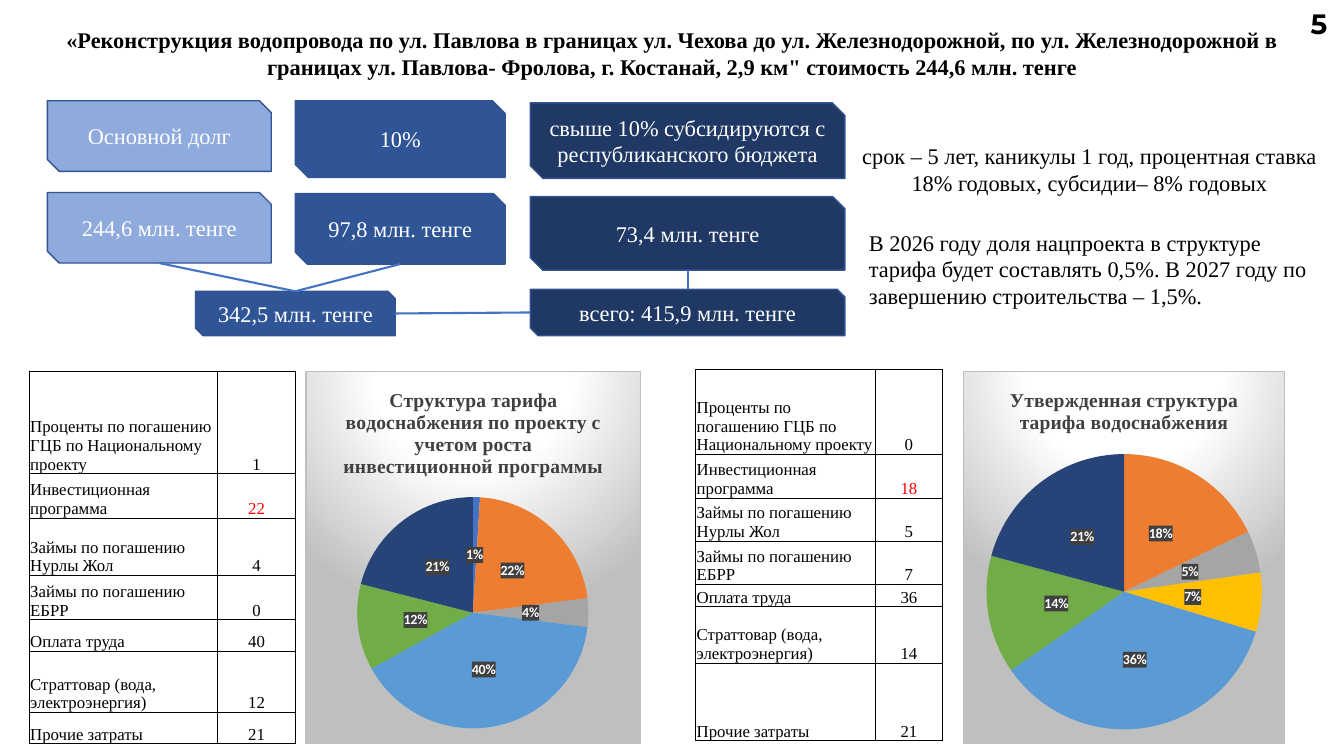
from lxml import etree
from pptx import Presentation
from pptx.chart.data import CategoryChartData
from pptx.dml.color import RGBColor
from pptx.enum import chart as ch, shapes, text
from pptx.oxml import parse_xml
from pptx.oxml.ns import qn
from pptx.util import Inches, Pt


class Theme:
    serif, sans, mark = "Times New Roman", "Calibri", "Montserrat"
    body, cell, head, label, page = 16, 12, 14, 10, 20
    black, white, red, grey = "000000", "FFFFFF", "FF0000", "404040"
    pale, mid, dark = "8FAADC", "2F5597", "203864"
    edge, link, rim = "325491", "4472C4", "BFBFBF"
    pie = ["4472C4", "ED7D31", "A5A5A5", "FFC000", "5B9BD5", "70AD47", "264478"]


TITLE = ("«Реконструкция водопровода по ул. Павлова в границах ул. Чехова до ул. "
         "Железнодорожной, по ул. Железнодорожной в границах ул. Павлова- Фролова, "
         "г. Костанай, 2,9 км\" стоимость 244,6 млн. тенге")
TERMS = ("срок – 5 лет, каникулы 1 год, процентная ставка 18% годовых, "
         "субсидии– 8% годовых")
SHARE = ("В 2026 году доля нацпроекта в структуре тарифа будет составлять 0,5%. "
         "В 2027 году по завершению строительства – 1,5%.")

# name: (words, fill, (left, top, width, height))
BOXES = {
    "debt": ("Основной долг", Theme.pale, (0.47, 1, 2.22, 0.7)),
    "rate": ("10%", Theme.mid, (2.93, 1, 2.08, 0.76)),
    "grant": ("свыше 10% субсидируются с республиканского бюджета", Theme.dark,
              (5.26, 1.02, 3.12, 0.75)),
    "debt sum": ("244,6 млн. тенге", Theme.pale, (0.47, 1.91, 2.22, 0.7)),
    "rate sum": ("97,8 млн. тенге", Theme.mid, (2.93, 1.92, 2.08, 0.7)),
    "grant sum": ("73,4 млн. тенге", Theme.dark, (5.26, 1.95, 3.12, 0.73)),
    "own": ("342,5 млн. тенге", Theme.mid, (1.94, 2.89, 1.98, 0.44)),
    "total": ("всего: 415,9 млн. тенге", Theme.dark, (5.26, 2.87, 3.12, 0.46)),
}
LINKS = [("debt sum", "bottom", "own", "top"), ("rate sum", "bottom", "own", "top"),
         ("own", "right", "total", "left"), ("grant sum", "bottom", "total", "top")]

COSTS = ["Проценты по погашению ГЦБ по Национальному проекту",
         "Инвестиционная программа", "Займы по погашению Нурлы Жол",
         "Займы по погашению ЕБРР", "Оплата труда",
         "Страттовар (вода, электроэнергия)", "Прочие затраты"]
INVEST = 1  # row whose value is red

# pie: left, top, diameter on the slide
TARIFFS = [
    dict(name="Структура тарифа водоснабжения по проекту с учетом роста "
              "инвестиционной программы",
         vals=[1, 22, 4, 0, 40, 12, 21],
         chart=(3.03, 3.68, 3.33, 3.7), pie=(3.54, 4.93, 2.3),
         grid=(0.29, 3.68), cols=[1.87, 0.77],
         rows=[1.02, 0.44, 0.57, 0.44, 0.31, 0.61, 0.31]),
    dict(name="Утвержденная структура тарифа водоснабжения",
         vals=[0, 18, 5, 7, 36, 14, 21],
         chart=(9.55, 3.68, 3.2, 3.7), pie=(9.78, 4.5, 2.74),
         grid=(6.9, 3.66), cols=[1.78, 0.67],
         rows=[0.85, 0.43, 0.43, 0.43, 0.22, 0.56, 0.77]),
]
NS = ('xmlns:a="http://schemas.openxmlformats.org/drawingml/2006/main" '
      'xmlns:c="http://schemas.openxmlformats.org/drawingml/2006/chart"')


def rgb(hue):
    return RGBColor.from_string(hue)


def style(font, size, hue, face=Theme.serif, bold=False):
    font.size, font.name, font.bold = Pt(size), face, bold
    font.color.rgb = rgb(hue)


def write(frame, words, size=Theme.body, hue=Theme.black, center=True, **kind):
    par = frame.paragraphs[0]
    par.alignment = text.PP_ALIGN.CENTER if center else text.PP_ALIGN.LEFT
    run = par.add_run()
    run.text = words
    style(run.font, size, hue, **kind)


def place(shape, *box):
    shape.left, shape.top, shape.width, shape.height = map(Inches, box)


def add_text(slide, box, words, **kind):
    frame = slide.shapes.add_textbox(*map(Inches, box)).text_frame
    frame.word_wrap = True
    write(frame, words, **kind)
    return frame


def add_box(slide, words, fill, box):
    shape = slide.shapes.add_shape(shapes.MSO_SHAPE.SNIP_2_DIAG_RECTANGLE,
                                   *map(Inches, box))
    shape.shadow.inherit = False
    shape.fill.solid()
    shape.fill.fore_color.rgb = rgb(fill)
    shape.line.color.rgb, shape.line.width = rgb(Theme.edge), Pt(1)
    shape.text_frame.vertical_anchor = text.MSO_ANCHOR.MIDDLE
    write(shape.text_frame, words, hue=Theme.white)


def port(name, side):
    """Middle of one side of a named box."""
    x, y, w, h = BOXES[name][2]
    dx, dy = {"top": (0.5, 0), "bottom": (0.5, 1),
              "left": (0, 0.5), "right": (1, 0.5)}[side]
    return Inches(x + w * dx), Inches(y + h * dy)


def add_link(slide, src, out, dst, into):
    line = slide.shapes.add_connector(shapes.MSO_CONNECTOR.STRAIGHT,
                                      *port(src, out), *port(dst, into))
    line.line.color.rgb, line.line.width = rgb(Theme.link), Pt(1.5)
    etree.SubElement(line._element.spPr, qn("a:effectLst"))


def layout(target, **parts):
    """XML for a manual layout, in shares of the chart area."""
    mark = f'<c:layoutTarget val="{target}"/>' if target else ""
    modes = "".join(f'<c:{k}Mode val="edge"/>' for k in "xy")
    sizes = "".join(f'<c:{k} val="{v:.3f}"/>' for k, v in parts.items())
    return parse_xml(f"<c:layout {NS}><c:manualLayout>{mark}{modes}{sizes}"
                     "</c:manualLayout></c:layout>")


def add_pie(slide, plan):
    data = CategoryChartData(number_format="#,##0")
    data.categories = [str(n + 1) for n in range(len(COSTS))]
    data.add_series("Series 1", plan["vals"])
    chart = slide.shapes.add_chart(ch.XL_CHART_TYPE.PIE,
                                   *map(Inches, plan["chart"]), data).chart
    style(chart.font, Theme.label, Theme.black, Theme.sans)
    chart.has_legend, chart.has_title = False, True
    write(chart.chart_title.text_frame, plan["name"], Theme.head, Theme.grey, bold=True)

    plot = chart.plots[0]
    plot.vary_by_categories = True
    for n, hue in enumerate(Theme.pie):
        fill = plot.series[0].points[n].format.fill
        fill.solid()
        fill.fore_color.rgb = rgb(hue)
    tags = plot.series[0].data_labels
    tags.show_percentage, tags.show_value = True, False
    tags.number_format, tags.number_format_is_linked = "0%", False
    tags.position = ch.XL_LABEL_POSITION.CENTER
    style(tags.font, Theme.label, Theme.white, Theme.sans, True)
    node = tags._element
    node.find(qn("c:numFmt")).addnext(parse_xml(
        f'<c:spPr {NS}><a:solidFill><a:srgbClr val="{Theme.grey}"/></a:solidFill></c:spPr>'))
    node.insert(0, parse_xml(f'<c:dLbl {NS}><c:idx val="{plan["vals"].index(0)}"/>'
                             '<c:delete val="1"/></c:dLbl>'))

    x, y, w, h = plan["chart"]
    left, top, size = plan["pie"]
    area = chart._chartSpace.chart.plotArea
    for old in area.findall(qn("c:layout")):
        area.remove(old)
    area.insert(0, layout("inner", x=(left - x) / w, y=(top - y) / h,
                          w=size / w, h=size / h))
    stops = "".join(f'<a:gs pos="{at}000"><a:srgbClr val="{hue}"/></a:gs>' for at, hue in
                    [(0, Theme.white), (39, Theme.white), (100, Theme.rim)])
    chart._chartSpace.chart.addnext(parse_xml(
        f'<c:spPr {NS}><a:gradFill><a:gsLst>{stops}</a:gsLst><a:path path="circle">'
        '<a:fillToRect l="50000" t="-80000" r="50000" b="180000"/></a:path></a:gradFill>'
        f'<a:ln w="9525"><a:solidFill><a:srgbClr val="{Theme.rim}"/></a:solidFill></a:ln>'
        '</c:spPr>'))


def add_cell(cell, words, hue, center):
    cell.margin_left = cell.margin_right = cell.margin_top = Inches(0.01)
    cell.margin_bottom = 0
    cell.vertical_anchor = text.MSO_ANCHOR.BOTTOM
    write(cell.text_frame, words, Theme.cell, hue, center)
    props = cell._tc.get_or_add_tcPr()
    for side in "LRTB":
        props.append(parse_xml(f'<a:ln{side} {NS} w="6350"><a:solidFill><a:srgbClr '
                               f'val="{Theme.black}"/></a:solidFill></a:ln{side}>'))
    cell.fill.background()


def add_grid(slide, plan):
    cols, rows = plan["cols"], plan["rows"]
    box = (*plan["grid"], sum(cols), sum(rows))
    table = slide.shapes.add_table(len(rows), len(cols), *map(Inches, box)).table
    table.first_row = table.horz_banding = False
    for col, width in zip(table.columns, cols):
        col.width = Inches(width)
    for n, (cost, val) in enumerate(zip(COSTS, plan["vals"])):
        table.rows[n].height = Inches(rows[n])
        add_cell(table.cell(n, 0), cost, Theme.black, False)
        add_cell(table.cell(n, 1), str(val), Theme.red if n == INVEST else Theme.black, True)


def main():
    deck = Presentation()
    deck.slide_width, deck.slide_height = Inches(13.33), Inches(7.5)
    slide = deck.slides.add_slide(deck.slide_layouts[5])
    title = slide.shapes.title
    place(title, 0.47, 0.21, 12.39, 0.64)
    title.text_frame.auto_size = text.MSO_AUTO_SIZE.NONE
    title.text_frame.vertical_anchor = text.MSO_ANCHOR.TOP
    write(title.text_frame, TITLE, bold=True)
    add_text(slide, (8.38, 1.36, 4.85, 0.64), TERMS)
    for box in BOXES.values():
        add_box(slide, *box)
    for link in LINKS:
        add_link(slide, *link)
    add_text(slide, (8.52, 2.22, 4.58, 0.91), SHARE, center=False)
    page = add_text(slide, (13, 0.15, 0.19, 0.17), "5", size=Theme.page,
                    center=False, face=Theme.mark, bold=True)
    page.margin_left = page.margin_right = page.margin_top = page.margin_bottom = 0
    page.vertical_anchor = text.MSO_ANCHOR.MIDDLE
    for plan in TARIFFS:
        add_pie(slide, plan)
        add_grid(slide, plan)
    deck.save("out.pptx")


if __name__ == "__main__":
    main()
